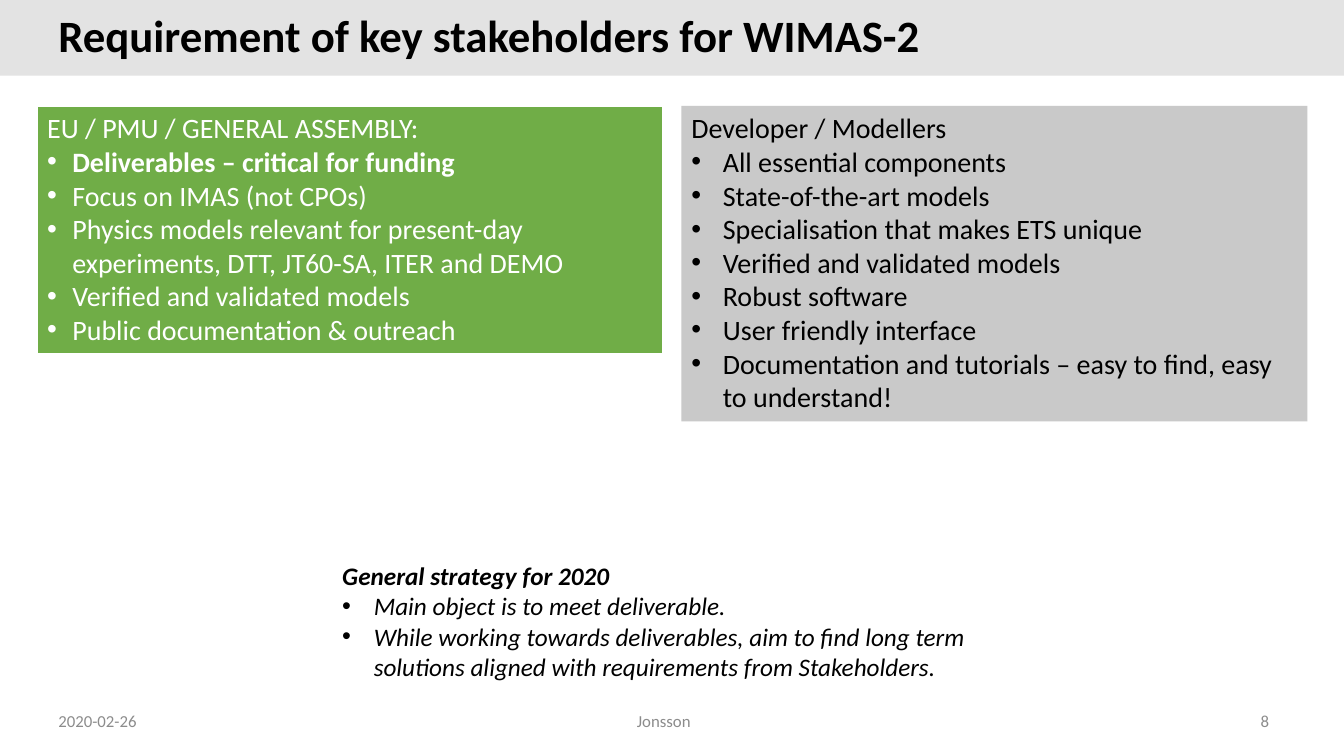
from lxml.etree import SubElement
from pptx import Presentation
from pptx.dml.color import RGBColor
from pptx.enum.shapes import MSO_SHAPE
from pptx.enum.text import MSO_ANCHOR, MSO_AUTO_SIZE, PP_ALIGN
from pptx.oxml.ns import qn
from pptx.util import Pt

WIDE, HIGH = 960, 540


def paint(color, value):
    color.rgb = RGBColor.from_string(value)


def add_rect(slide, box, fill, alpha=None, line=None):
    shape = slide.shapes.add_shape(MSO_SHAPE.RECTANGLE, *map(Pt, box))
    shape.shadow.inherit = False
    shape.fill.solid()
    paint(shape.fill.fore_color, fill)
    if alpha:
        tint = shape.fill._xPr.find(qn("a:solidFill"))[0]
        SubElement(tint, qn("a:alpha"), val=str(alpha * 1000))
    if line:
        paint(shape.line.color, line)
        shape.line.width = Pt(1.5)
    else:
        shape.line.fill.background()
    return shape


def style(para, size, color, bold=False, italic=False, align=PP_ALIGN.LEFT):
    para.alignment = align
    for run in para.runs:
        font = run.font
        font.name, font.size = "Calibri", Pt(size)
        font.bold, font.italic = bold, italic
        paint(font.color, color)


def add_bullet(para, indent):
    props = para._p.get_or_add_pPr()
    props.set("marL", str(Pt(indent)))
    props.set("indent", str(-Pt(indent)))
    SubElement(props, qn("a:buFont"), typeface="Arial")
    SubElement(props, qn("a:buChar"), char="•")


def fill_list(shape, lines, indent, size, color, bold=(), italic=False):
    """Heading followed by bullets; bold holds the numbers of bold lines."""
    frame = shape.text_frame
    frame.word_wrap = True
    frame.vertical_anchor = MSO_ANCHOR.TOP
    frame.text = "\n".join(lines)
    for i, para in enumerate(frame.paragraphs):
        if i:
            add_bullet(para, indent)
        style(para, size, color, i in bold, italic)
    frame.auto_size = MSO_AUTO_SIZE.SHAPE_TO_FIT_TEXT


def add_line(slide, box, text, size, color, bold=False, align=PP_ALIGN.LEFT):
    frame = slide.shapes.add_textbox(*map(Pt, box)).text_frame
    frame.word_wrap = True
    frame.vertical_anchor = MSO_ANCHOR.MIDDLE
    frame.text = text
    style(frame.paragraphs[0], size, color, bold, align=align)
    return frame.paragraphs[0]


def add_header(slide, box):
    left, top, width, height = box
    add_rect(slide, box, "E3E3E3")
    title = add_line(slide, (left + 34.6, top + 9.4, 831, 35.3),
                     "Requirement of key stakeholders for WIMAS-2",
                     32, "000000", True)
    title.line_spacing = 0.9


def add_panels(slide, box):
    left, top, width, height = box
    wide = 447.1

    # Modellers, on the right
    grey = add_rect(slide, (left + width - wide, top, wide, height),
                    "A5A5A5", alpha=60)
    fill_list(grey, [
        "Developer / Modellers",
        "All essential components",
        "State-of-the-art models",
        "Specialisation that makes ETS unique",
        "Verified and validated models",
        "Robust software",
        "User friendly interface",
        "Documentation and tutorials – easy to find, easy to understand!",
    ], 22.5, 20, "000000")

    # Funders, on the left
    green = add_rect(slide, (left, top, wide, 177.1), "70AD47", line="FFFFFF")
    fill_list(green, [
        "EU / PMU / GENERAL ASSEMBLY:",
        "Deliverables – critical for funding",
        "Focus on IMAS (not CPOs)",
        "Physics models relevant for present-day experiments, "
        "DTT, JT60-SA, ITER and DEMO",
        "Verified and validated models",
        "Public documentation & outreach",
    ], 18, 20, "FFFFFF", bold=(1,))


def add_plan(slide, box):
    fill_list(slide.shapes.add_textbox(*map(Pt, box)), [
        "General strategy for 2020",
        "Main object is to meet deliverable.",
        "While working towards deliverables, aim to find long term "
        "solutions aligned with requirements from Stakeholders.",
    ], 22.5, 18, "000000", bold=(0,), italic=True)


def add_footer(slide, box):
    left, top, width, height = box
    parts = [("2020-02-26", 216, 0, PP_ALIGN.LEFT),
             ("Jonsson", 324, 0.5, PP_ALIGN.CENTER),
             ("8", 216, 1, PP_ALIGN.RIGHT)]
    for text, wide, share, align in parts:
        spot = (left + (width - wide) * share, top, wide, height)
        add_line(slide, spot, text, 12, "8C8C8C", align=align)


def main():
    deck = Presentation()
    deck.slide_width, deck.slide_height = Pt(WIDE), Pt(HIGH)
    slide = deck.slides.add_slide(deck.slide_layouts[6])
    add_header(slide, (0, 0, WIDE, 54))
    add_panels(slide, (26.6, 75.6, 907.2, 225.4))
    add_plan(slide, (237.4, 396.7, 473, 94.3))
    add_footer(slide, (34.6, 500.4, 879.1, 28.8))
    deck.save("out.pptx")


if __name__ == "__main__":
    main()
